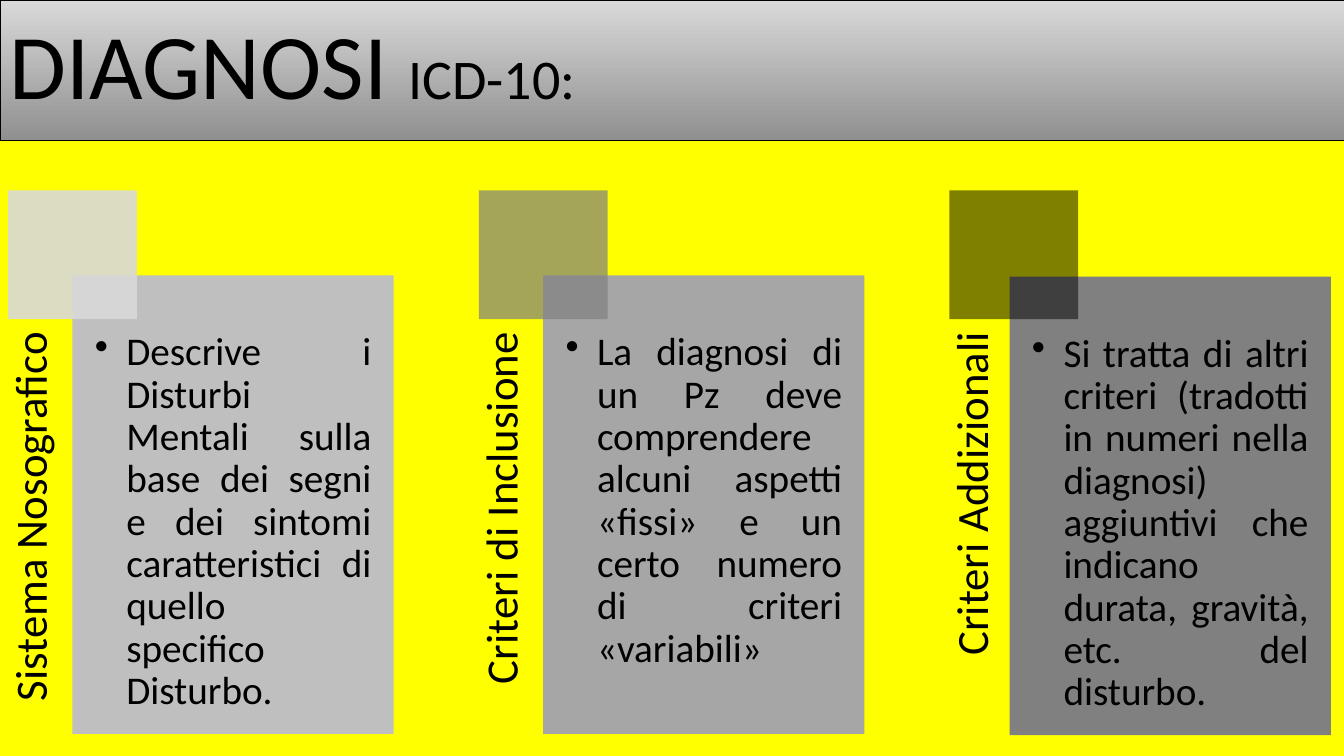
from dataclasses import dataclass

import pptx
import pptx.dml.color
import pptx.enum.shapes
import pptx.enum.text
import pptx.oxml.ns
import pptx.shapes.autoshape
import pptx.slide
import pptx.text.text
import pptx.util
from lxml import etree

Pt = pptx.util.Pt
RGBColor = pptx.dml.color.RGBColor
Align = pptx.enum.text.PP_ALIGN
Anchor = pptx.enum.text.MSO_ANCHOR
qn = pptx.oxml.ns.qn

FONT = "Calibri"
BLACK = RGBColor(0x00, 0x00, 0x00)
YELLOW = RGBColor(0xFF, 0xFF, 0x00)
PALE_GREY = RGBColor(0xD9, 0xD9, 0xD9)
LIGHT_GREY = RGBColor(0xBF, 0xBF, 0xBF)
MEDIUM_GREY = RGBColor(0xA6, 0xA6, 0xA6)
TITLE_GREY = RGBColor(0x90, 0x90, 0x90)
DARK_GREY = RGBColor(0x80, 0x80, 0x80)

PAGE_WIDTH, PAGE_HEIGHT = 960, 540
TITLE_HEIGHT = 100
FIRST_LEFT, COLUMN_PITCH = 5.8, 336.2
SQUARE_TOP, SQUARE_SIZE = 136, 92
PANEL_WIDTH, PANEL_HEIGHT = 229.5, 327.6
LABEL_LENGTH, LABEL_THICKNESS, LABEL_MIDDLE = 327.6, 46, 360.6
BULLET_INDENT = 22.5


@dataclass(frozen=True)
class Column:
    label: str
    text: str
    panel_color: RGBColor
    square_color: RGBColor
    opacity: int  # percent
    panel_offset: float = 46
    panel_top: float = 196.6


COLUMNS = (
    Column("Sistema Nosografico",
           "Descrive i Disturbi Mentali sulla base dei segni e dei sintomi "
           "caratteristici di quello specifico Disturbo.",
           LIGHT_GREY, PALE_GREY, 90),
    Column("Criteri di Inclusione",
           "La diagnosi di un Pz deve comprendere alcuni aspetti «fissi» e un "
           "certo numero di criteri «variabili»",
           MEDIUM_GREY, DARK_GREY, 70),
    Column("Criteri Addizionali",
           "Si tratta di altri criteri (tradotti in numeri nella diagnosi) "
           "aggiuntivi che indicano durata, gravità, etc. del disturbo.",
           DARK_GREY, BLACK, 50, panel_offset=43, panel_top=197.6),
)


def add_box(page: pptx.slide.Slide, left: float, top: float, width: float,
            height: float, color: RGBColor) -> pptx.shapes.autoshape.Shape:
    box = page.shapes.add_shape(pptx.enum.shapes.MSO_SHAPE.RECTANGLE,
                                Pt(left), Pt(top), Pt(width), Pt(height))
    box.shadow.inherit = False
    box.fill.solid()
    box.fill.fore_color.rgb = color
    box.line.fill.background()
    return box


def set_insets(frame: pptx.text.text.TextFrame, left: float, top: float,
               right: float, bottom: float) -> None:
    frame.margin_left, frame.margin_top = Pt(left), Pt(top)
    frame.margin_right, frame.margin_bottom = Pt(right), Pt(bottom)


def format_para(para: pptx.text.text._Paragraph, align: Align, *sizes: float) -> None:
    para.alignment = align
    para.line_spacing = 0.9
    for span, size in zip(para.runs, sizes):
        span.font.name = FONT
        span.font.size = Pt(size)
        span.font.color.rgb = BLACK


def add_bullet(para: pptx.text.text._Paragraph) -> None:
    properties = para._p.get_or_add_pPr()
    properties.set("marL", str(Pt(BULLET_INDENT)))
    properties.set("indent", str(-Pt(BULLET_INDENT)))
    etree.SubElement(properties, qn("a:buChar")).set("char", "•")


def add_title(page: pptx.slide.Slide) -> None:
    box = add_box(page, 0, 0, PAGE_WIDTH, TITLE_HEIGHT, PALE_GREY)
    box.fill.gradient()
    box.fill.gradient_angle = 270
    for stop, color in zip(box.fill.gradient_stops, (PALE_GREY, TITLE_GREY)):
        stop.color.rgb = color
    box.line.color.rgb = BLACK
    box.line.width = Pt(0.5)
    frame = box.text_frame
    frame.vertical_anchor = Anchor.MIDDLE
    para = frame.paragraphs[0]
    para.text = "DIAGNOSI "
    para.add_run().text = "ICD-10:"
    format_para(para, Align.LEFT, 66, 40)


def add_label(page: pptx.slide.Slide, left: float, text: str) -> None:
    center = left + LABEL_THICKNESS / 2
    box = page.shapes.add_textbox(
        Pt(center - LABEL_LENGTH / 2), Pt(LABEL_MIDDLE - LABEL_THICKNESS / 2),
        Pt(LABEL_LENGTH), Pt(LABEL_THICKNESS))
    box.rotation = 270
    frame = box.text_frame
    frame.word_wrap = True
    set_insets(frame, 0, 0, 40.5, 0)
    frame.text = text
    format_para(frame.paragraphs[0], Align.RIGHT, 32)


def add_column(page: pptx.slide.Slide, left: float, column: Column) -> None:
    add_label(page, left, column.label)

    # Panel with the bulleted description
    panel = add_box(page, left + column.panel_offset, column.panel_top,
                    PANEL_WIDTH, PANEL_HEIGHT, column.panel_color)
    frame = panel.text_frame
    frame.vertical_anchor = Anchor.TOP
    set_insets(frame, 16, 40.5, 16, 16)
    frame.text = column.text
    format_para(frame.paragraphs[0], Align.JUSTIFY, 28)
    add_bullet(frame.paragraphs[0])

    # Translucent square over the panel corner
    square = add_box(page, left, SQUARE_TOP, SQUARE_SIZE, SQUARE_SIZE,
                     column.square_color)
    color = square._element.spPr.find(qn("a:solidFill")).find(qn("a:srgbClr"))
    etree.SubElement(color, qn("a:alpha")).set("val", str(column.opacity * 1000))


def main() -> None:
    deck = pptx.Presentation()
    deck.slide_width, deck.slide_height = Pt(PAGE_WIDTH), Pt(PAGE_HEIGHT)
    page = deck.slides.add_slide(deck.slide_layouts[6])
    page.background.fill.solid()
    page.background.fill.fore_color.rgb = YELLOW

    for index, column in enumerate(COLUMNS):
        add_column(page, FIRST_LEFT + index * COLUMN_PITCH, column)
    add_title(page)
    deck.save("out.pptx")


if __name__ == "__main__":
    main()
